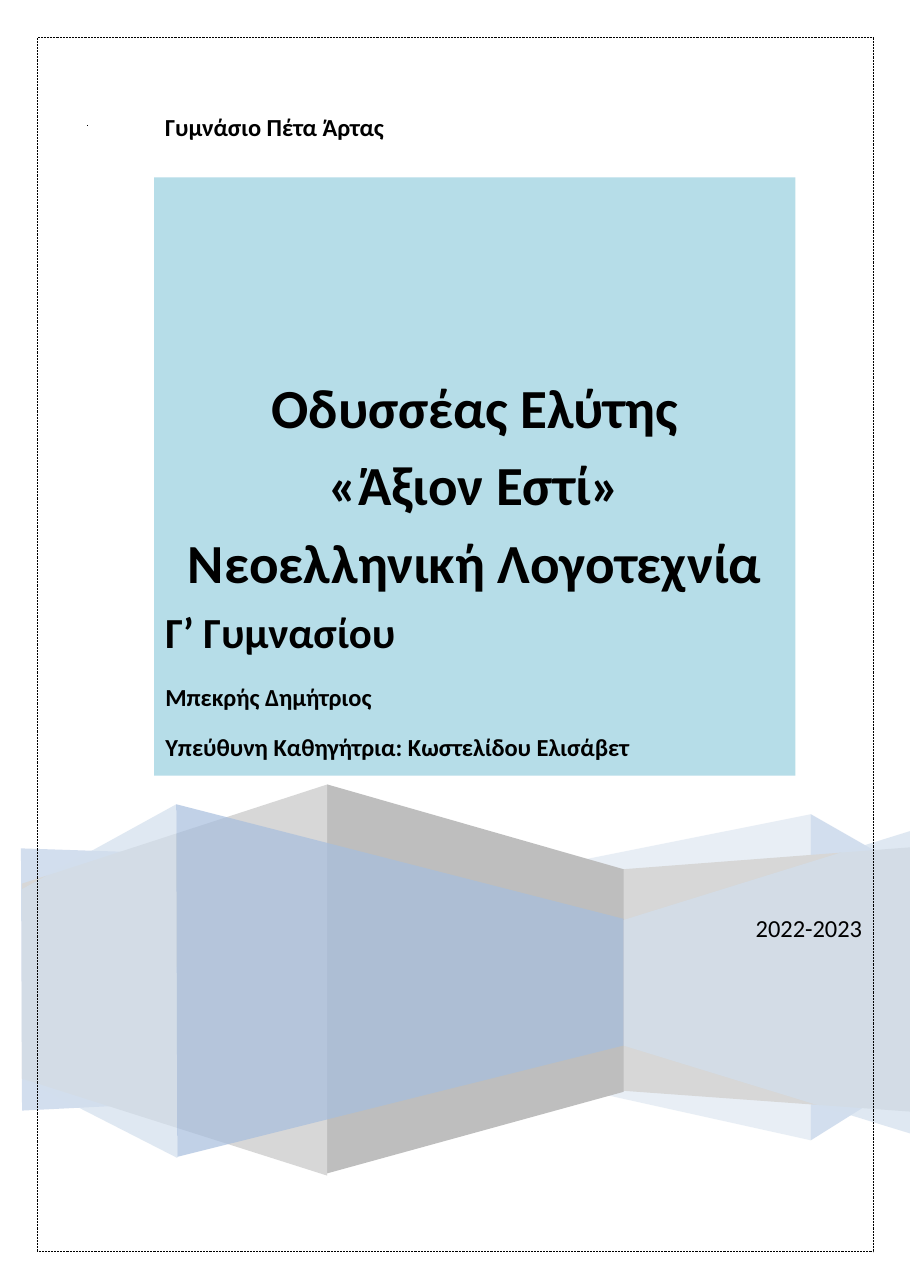
from dataclasses import dataclass

from lxml.etree import SubElement
from pptx import Presentation
from pptx.dml.color import RGBColor
from pptx.enum.dml import MSO_LINE_DASH_STYLE as Dash
from pptx.enum.shapes import MSO_CONNECTOR as Connector, MSO_SHAPE as Shape
from pptx.enum.text import MSO_ANCHOR as Anchor, PP_ALIGN as Align
from pptx.oxml.ns import qn
from pptx.util import Emu, Pt

SCALE = 9144  # EMU per px, 100 px to the inch
PAGE_WIDTH, PAGE_HEIGHT = 826, 1169


def px(length: int) -> Emu:
    return Emu(length * SCALE)


@dataclass(frozen=True)
class Theme:
    font: str = "Calibri"
    ink: str = "000000"
    panel: str = "B6DDE8"
    blue: str = "A7BEDE"
    pale_blue: str = "D2DFED"
    light_gray: str = "D7D7D7"
    gray: str = "BEBEBE"
    title: int = 36
    grade: int = 28
    body: int = 16
    line: float = 0.48


THEME = Theme()


@dataclass(frozen=True)
class Panel:
    points: tuple[tuple[int, int], ...]
    color: str
    opacity: int = 100


@dataclass(frozen=True)
class Line:
    text: str
    size: int = THEME.body
    bold: bool = True
    align: Align = Align.LEFT
    before: float = 0
    indent: int = 0


@dataclass(frozen=True)
class Label:
    box: tuple[int, int, int, int]
    line: Line


# Folded ribbon, from back to front
RIBBON = (
    Panel(((19, 770), (20, 1008), (501, 984), (501, 786)), THEME.blue, 50),
    Panel(((736, 739), (501, 786), (501, 983), (736, 1035)), THEME.pale_blue, 50),
    Panel(((736, 739), (736, 1035), (827, 978), (827, 791)), THEME.blue, 50),
    Panel(((827, 769), (565, 789), (565, 990), (827, 1009)), THEME.light_gray),
    Panel(((297, 712), (297, 1065), (566, 991), (566, 789)), THEME.gray),
    Panel(((297, 712), (20, 802), (20, 979), (297, 1067)), THEME.light_gray),
    Panel(((160, 730), (20, 807), (20, 979), (161, 1051)), THEME.pale_blue, 70),
    Panel(((160, 730), (161, 1050), (566, 949), (566, 834)), THEME.blue, 70),
    Panel(((827, 754), (566, 835), (566, 949), (827, 1029)), THEME.pale_blue, 70),
)

LABELS = (
    Label((149, 100, 203, 30), Line("Γυμνάσιο Πέτα Άρτας")),
    Label((685, 827, 100, 30), Line("2022-2023", bold=False)),
)

TITLE_LINES = (
    Line("Οδυσσέας Ελύτης", THEME.title, align=Align.CENTER),
    Line("«Άξιον Εστί»", THEME.title, align=Align.CENTER, before=7.2),
    Line("Νεοελληνική Λογοτεχνία", THEME.title, align=Align.CENTER, before=7.5),
    Line("Γ’ Γυμνασίου", THEME.grade, before=7.3, indent=10),
    Line("Μπεκρής Δημήτριος", before=16.3, indent=10),
    Line("Υπεύθυνη Καθηγήτρια: Κωστελίδου Ελισάβετ", before=13.5, indent=10),
)


def set_fill(shape, color: str, opacity: int = 100) -> None:
    shape.shadow.inherit = False
    shape.line.fill.background()
    shape.fill.solid()
    shape.fill.fore_color.rgb = RGBColor.from_string(color)
    if opacity < 100:
        color_element = shape.element.spPr.find(qn("a:solidFill"))[0]
        SubElement(color_element, qn("a:alpha"), val=str(opacity * 1000))


def set_dotted(line) -> None:
    line.color.rgb = RGBColor.from_string(THEME.ink)
    line.width = Pt(THEME.line)
    line.dash_style = Dash.ROUND_DOT


def draw_panel(slide, panel: Panel) -> None:
    first, *others = panel.points
    builder = slide.shapes.build_freeform(*first, scale=SCALE)
    builder.add_line_segments(others, close=True)
    set_fill(builder.convert_to_shape(), panel.color, panel.opacity)


def write_lines(shape, lines: tuple[Line, ...], top: int, left: int = 0) -> None:
    frame = shape.text_frame
    frame.word_wrap = True
    frame.vertical_anchor = Anchor.TOP
    frame.margin_left, frame.margin_top = px(left), px(top)
    frame.margin_right = frame.margin_bottom = 0
    for index, line in enumerate(lines):
        paragraph = frame.add_paragraph() if index else frame.paragraphs[0]
        paragraph.text = line.text
        paragraph.alignment = line.align
        if line.before:
            paragraph.space_before = Pt(line.before)
        if line.indent:
            paragraph._p.get_or_add_pPr().set("marL", str(px(line.indent)))
        font = paragraph.font
        font.name, font.size, font.bold = THEME.font, Pt(line.size), line.bold
        font.color.rgb = RGBColor.from_string(THEME.ink)


def draw_label(slide, label: Label) -> None:
    shape = slide.shapes.add_textbox(*map(px, label.box))
    write_lines(shape, (label.line,), top=2, left=1)


def draw_title(slide) -> None:
    shape = slide.shapes.add_shape(Shape.RECTANGLE, *map(px, (140, 161, 582, 543)))
    set_fill(shape, THEME.panel)
    write_lines(shape, TITLE_LINES, top=178)


def draw_border(slide) -> None:
    border = slide.shapes.add_shape(Shape.RECTANGLE, *map(px, (34, 34, 759, 1102)))
    border.shadow.inherit = False
    border.fill.background()
    set_dotted(border.line)
    dot = slide.shapes.add_connector(Connector.STRAIGHT, *map(px, (79, 114, 80, 114)))
    set_dotted(dot.line)
    SubElement(dot.element.spPr, qn("a:effectLst"))


def main() -> None:
    presentation = Presentation()
    presentation.slide_width = px(PAGE_WIDTH)
    presentation.slide_height = px(PAGE_HEIGHT)
    slide = presentation.slides.add_slide(presentation.slide_layouts[6])

    for panel in RIBBON:
        draw_panel(slide, panel)
    for label in LABELS:
        draw_label(slide, label)
    draw_title(slide)
    draw_border(slide)
    presentation.save("out.pptx")


if __name__ == "__main__":
    main()
